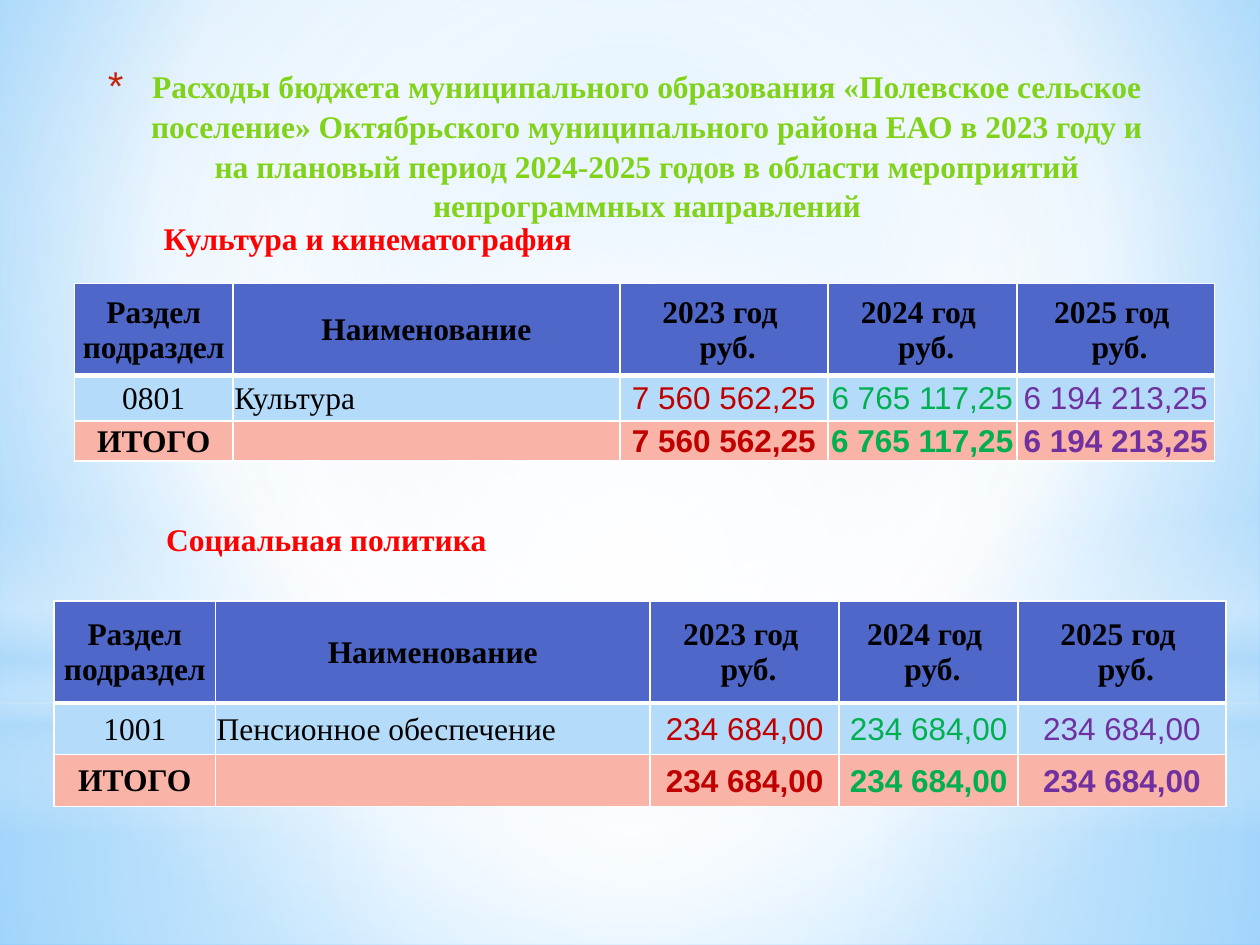
"""Build a slide with two budget tables under a bulleted heading."""
from lxml import etree
from pptx import Presentation, util as u
from pptx.dml.color import RGBColor
from pptx.enum import shapes, text
from pptx.oxml import parse_xml
from pptx.oxml.ns import nsdecls, qn

WIDTH, HEIGHT = 10, 7.5
SERIF, SANS = "Times New Roman", "Arial"
BLACK = RGBColor(0x00, 0x00, 0x00)
RED = RGBColor(0xFF, 0x00, 0x00)
LIME = RGBColor(0x81, 0xD3, 0x1A)
BULLET_RED = RGBColor(0xC3, 0x26, 0x0C)
WHITE = RGBColor(0xFF, 0xFF, 0xFF)
PALE = RGBColor(0xB4, 0xDC, 0xFA)
SKY = RGBColor(0x9E, 0xD5, 0xFF)
DEEP_SKY = RGBColor(0x5B, 0xB9, 0xFF)
ROW_FILLS = (RGBColor(0x4E, 0x67, 0xC8), PALE, RGBColor(0xF9, 0xB3, 0xA7))
YEAR_COLORS = (
    RGBColor(0xC0, 0x00, 0x00),
    RGBColor(0x00, 0xB0, 0x50),
    RGBColor(0x70, 0x30, 0xA0),
)

TITLE = (
    "Расходы бюджета муниципального образования «Полевское сельское поселение» "
    "Октябрьского муниципального района ЕАО в 2023 году и на плановый период "
    "2024-2025 годов в области мероприятий непрограммных направлений"
)
HEADER = ["Раздел подраздел", "Наименование"] + [
    f"{year} год \n руб." for year in (2023, 2024, 2025)
]
SECTIONS = [
    {
        "heading": "Культура и кинематография",
        "heading_box": (1.2, 1.69, 3.47, 0.4),
        "wrap": False,
        "origin": (0.59, 2.25),
        "columns": (1.26, 3.07, 1.65, 1.5, 1.57),
        "rows": (0.73, 0.36, 0.32),
        "item": ["0801", "Культура"],
        "amounts": ["7 560 562,25", "6 765 117,25", "6 194 213,25"],
    },
    {
        "heading": "Социальная политика",
        "heading_box": (1.22, 4.08, 5.28, 0.4),
        "wrap": True,
        "origin": (0.43, 4.77),
        "columns": (1.28, 3.45, 1.5, 1.42, 1.65),
        "rows": (0.81, 0.41, 0.41),
        "item": ["1001", "Пенсионное обеспечение"],
        "amounts": ["234 684,00"] * 3,
    },
]
CENTER = (50, 50, 50, 50)
BACKGROUND = [(0, SKY, 100), (60, WHITE, 100), (100, DEEP_SKY, 100)]
RECTANGLE, OVAL = shapes.MSO_SHAPE.RECTANGLE, shapes.MSO_SHAPE.OVAL
GLOWS = [
    (RECTANGLE, (0, 5.58, WIDTH, 1.92), CENTER,
     [(0, WHITE, 91), (37, WHITE, 76), (100, PALE, 79)]),
    (RECTANGLE, (0, 0, WIDTH, 5.58), CENTER,
     [(0, WHITE, 89), (48, WHITE, 62), (100, PALE, 79)]),
    (RECTANGLE, (0, 4.12, WIDTH, 2.5), None,
     [(0, WHITE, 0), (29, WHITE, 30), (45, PALE, 40),
      (55, WHITE, 26), (65, PALE, 60), (100, WHITE, 0)]),
    (OVAL, (0, 1.75, WIDTH, 5.58), CENTER, [(0, WHITE, 100), (56, WHITE, 0)]),
]


def inches(lengths):
    return [u.Inches(length) for length in lengths]


def set_gradient(fill, element, stops, focus):
    fill.gradient()
    old = element.find(".//" + qn("a:gradFill"))
    stop_xml = "".join(
        f'<a:gs pos="{position * 1000}"><a:srgbClr val="{color}">'
        f'<a:alpha val="{alpha * 1000}"/></a:srgbClr></a:gs>'
        for position, color, alpha in stops
    )
    if focus:
        edges = " ".join(f'{side}="{share * 1000}"' for side, share in zip("ltrb", focus))
        direction = f'<a:path path="circle"><a:fillToRect {edges}/></a:path>'
    else:
        direction = '<a:lin ang="5400000" scaled="0"/>'
    old.getparent().replace(old, parse_xml(
        f'<a:gradFill rotWithShape="1" {nsdecls("a")}>'
        f"<a:gsLst>{stop_xml}</a:gsLst>{direction}</a:gradFill>"
    ))


def write(frame, content, *, font=SERIF, color=BLACK, bold=True,
          align=text.PP_ALIGN.LEFT, spacing=None):
    for index, line in enumerate(content.split("\n")):
        paragraph = frame.add_paragraph() if index else frame.paragraphs[0]
        paragraph.alignment = align
        paragraph.line_spacing = spacing
        run = paragraph.add_run()
        run.text = line
        run.font.name, run.font.size = font, u.Pt(18)
        run.font.bold, run.font.color.rgb = bold, color


def add_text(slide, box, content, wrap=True, **style):
    frame = slide.shapes.add_textbox(*inches(box)).text_frame
    frame.word_wrap = wrap
    write(frame, content, **style)
    return frame


def add_title(slide):
    frame = add_text(slide, (0.59, 0.47, 8.74, 1.25), TITLE, color=LIME,
                     align=text.PP_ALIGN.CENTER, spacing=1.05)
    properties = frame.paragraphs[0]._p.get_or_add_pPr()
    properties.set("marL", str(u.Inches(0.35)))
    properties.set("indent", str(-u.Inches(0.35)))
    color = etree.SubElement(properties, qn("a:buClr"))
    etree.SubElement(color, qn("a:srgbClr"), val=str(BULLET_RED))
    etree.SubElement(properties, qn("a:buSzPct"), val="128000")
    etree.SubElement(properties, qn("a:buFont"), typeface=SANS)
    etree.SubElement(properties, qn("a:buChar"), char="*")


def format_cell(cell, row):
    cell.margin_left = cell.margin_top = cell.margin_right = u.Inches(0.01)
    cell.margin_bottom = 0
    cell.vertical_anchor = text.MSO_ANCHOR.MIDDLE
    heavy_side = {0: "B", 1: "T"}.get(row)
    for side in "LRTB":
        points = 3 if side == heavy_side else 1
        cell._tc.get_or_add_tcPr().append(parse_xml(
            f'<a:ln{side} w="{u.Pt(points)}" {nsdecls("a")}><a:solidFill>'
            f'<a:srgbClr val="{WHITE}"/></a:solidFill></a:ln{side}>'
        ))
    cell.fill.solid()
    cell.fill.fore_color.rgb = ROW_FILLS[row]


def add_budget_table(slide, section):
    columns, rows = section["columns"], section["rows"]
    box = (*section["origin"], sum(columns), sum(rows))
    table = slide.shapes.add_table(len(rows), len(columns), *inches(box)).table
    table.first_row = table.horz_banding = False
    for column, width in zip(table.columns, columns):
        column.width = u.Inches(width)
    for row, height in zip(table.rows, rows):
        row.height = u.Inches(height)
    amounts = section["amounts"]
    content = [HEADER, section["item"] + amounts, ["ИТОГО", ""] + amounts]
    for row, values in enumerate(content):
        for column, value in enumerate(values):
            cell = table.cell(row, column)
            format_cell(cell, row)
            is_amount = row > 0 and column > 1
            is_name = row > 0 and column == 1
            write(cell.text_frame, value,
                  font=SANS if is_amount else SERIF,
                  color=YEAR_COLORS[column - 2] if is_amount else BLACK,
                  bold=row != 1,
                  align=text.PP_ALIGN.LEFT if is_name else text.PP_ALIGN.CENTER)


def main():
    presentation = Presentation()
    presentation.slide_width, presentation.slide_height = inches((WIDTH, HEIGHT))
    slide = presentation.slides.add_slide(presentation.slide_layouts[6])
    set_gradient(slide.background.fill, slide._element, BACKGROUND, (20, 10, 20, 60))
    for kind, box, focus, stops in GLOWS:
        shape = slide.shapes.add_shape(kind, *inches(box))
        shape.shadow.inherit = False
        shape.line.fill.background()
        set_gradient(shape.fill, shape._element, stops, focus)
    for section in SECTIONS:
        add_text(slide, section["heading_box"], section["heading"],
                 wrap=section["wrap"], color=RED)
    add_title(slide)
    for section in SECTIONS:
        add_budget_table(slide, section)
    presentation.save("out.pptx")


if __name__ == "__main__":
    main()
